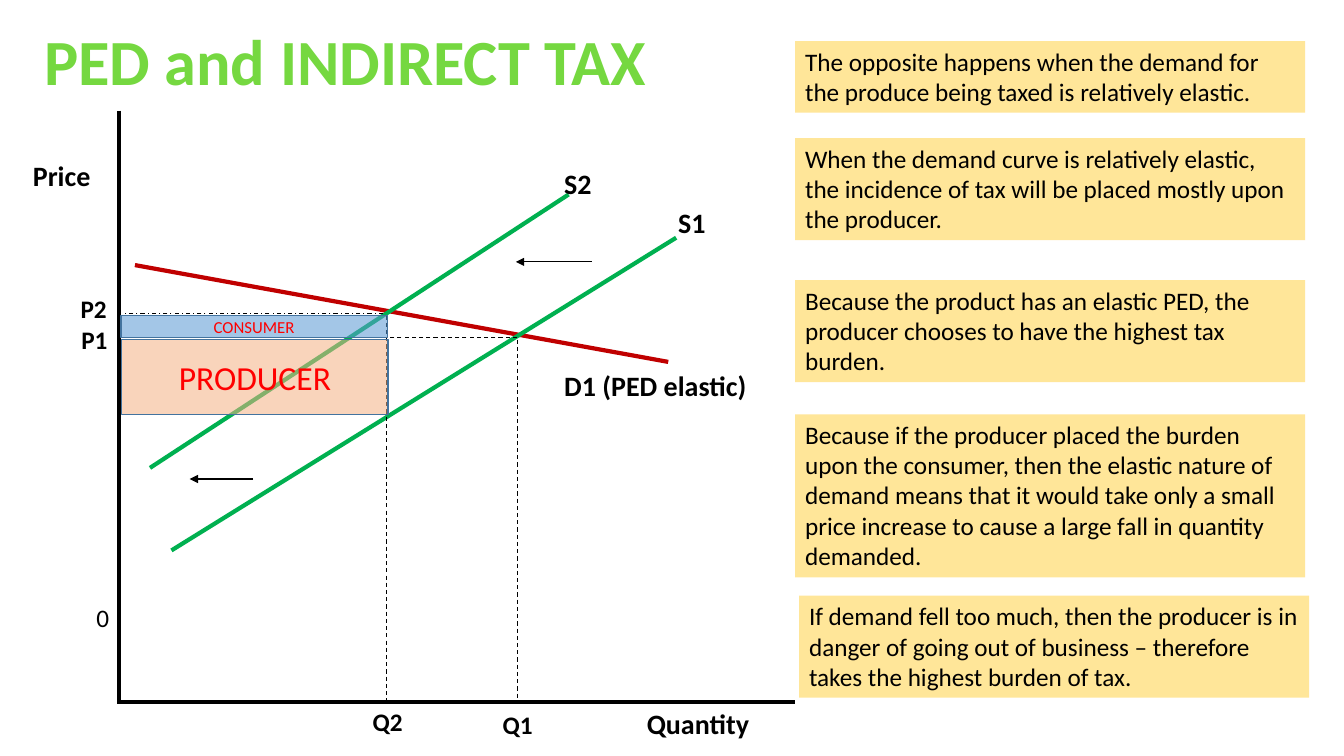
from dataclasses import dataclass

import lxml.etree
import pptx
import pptx.dml.color
import pptx.enum.dml
import pptx.enum.shapes
import pptx.enum.text
import pptx.oxml.ns
import pptx.util
from pptx.util import Cm


@dataclass(frozen=True)
class Theme:
    font: str = "Calibri"
    black: str = "000000"
    title: str = "75D840"
    demand: str = "C00000"
    supply: str = "00B050"
    note: str = "FFE699"
    producer: str = "F4B183"
    consumer: str = "5B9BD5"
    burden_border: str = "43739E"
    burden_text: str = "FF0000"
    title_size: int = 46
    producer_size: int = 24
    label_size: int = 20
    body_size: int = 18
    consumer_size: int = 12
    thick: float = 3
    thin: float = 0.75


THEME = Theme()
DASH = pptx.enum.dml.MSO_LINE.DASH
DASH_DOT = pptx.enum.dml.MSO_LINE.DASH_DOT
AXIS_X, AXIS_Y = 3.0, 17.68
Q1_X, Q2_X = 13.03, 9.75


def rgb(colour):
    return pptx.dml.color.RGBColor.from_string(colour)


def add_child(parent, tag, **attributes):
    return lxml.etree.SubElement(parent, pptx.oxml.ns.qn(tag), **attributes)


def write(shape, text, size, colour=THEME.black, bold=False, fit=True):
    frame = shape.text_frame
    frame.word_wrap = True
    if fit:
        frame.auto_size = pptx.enum.text.MSO_AUTO_SIZE.SHAPE_TO_FIT_TEXT
    paragraph = frame.paragraphs[0]
    paragraph.text = text
    paragraph.font.name = THEME.font
    paragraph.font.size = pptx.util.Pt(size)
    paragraph.font.bold = bold
    paragraph.font.color.rgb = rgb(colour)
    return paragraph


def add_label(slide, text, left, top, width, height, size,
              colour=THEME.black, bold=True):
    label = slide.shapes.add_textbox(Cm(left), Cm(top), Cm(width), Cm(height))
    write(label, text, size, colour, bold)


def add_line(slide, start, end, colour=THEME.black, width=THEME.thin,
             dash=None, arrow=False):
    line = slide.shapes.add_connector(
        pptx.enum.shapes.MSO_CONNECTOR.STRAIGHT,
        Cm(start[0]), Cm(start[1]), Cm(end[0]), Cm(end[1]))
    line.line.color.rgb = rgb(colour)
    line.line.width = pptx.util.Pt(width)
    if dash:
        line.line.dash_style = dash
    if arrow:
        add_child(line.line._get_or_add_ln(), "a:tailEnd", type="triangle")
    add_child(line._element.spPr, "a:effectLst")


def add_box(slide, left, top, width, height, fill):
    box = slide.shapes.add_shape(
        pptx.enum.shapes.MSO_SHAPE.RECTANGLE,
        Cm(left), Cm(top), Cm(width), Cm(height))
    box.shadow.inherit = False
    box.fill.solid()
    box.fill.fore_color.rgb = rgb(fill)
    box.line.fill.background()
    return box


def add_burden(slide, text, left, top, height, fill, opacity, size):
    burden = add_box(slide, left, top, 6.71, height, fill)
    fill_colour = burden._element.spPr.find(".//" + pptx.oxml.ns.qn("a:srgbClr"))
    add_child(fill_colour, "a:alpha", val=str(opacity * 1000))
    burden.line.color.rgb = rgb(THEME.burden_border)
    burden.line.width = pptx.util.Pt(1)
    burden.text_frame.vertical_anchor = pptx.enum.text.MSO_ANCHOR.MIDDLE
    paragraph = write(burden, text, size, THEME.burden_text, fit=False)
    paragraph.alignment = pptx.enum.text.PP_ALIGN.CENTER


def add_note(slide, text, left, top, height):
    note = add_box(slide, left, top, 12.85, height, THEME.note)
    note.text_frame.vertical_anchor = pptx.enum.text.MSO_ANCHOR.TOP
    paragraph = write(note, text, THEME.body_size)
    paragraph.alignment = pptx.enum.text.PP_ALIGN.LEFT


def add_diagram(slide):
    # Axes
    add_line(slide, (AXIS_X, 2.79), (AXIS_X, AXIS_Y), width=THEME.thick)
    add_line(slide, (2.95, AXIS_Y), (20.04, AXIS_Y), width=THEME.thick)

    # Demand and supply curves
    for start, end, colour in (
        ((3.4, 6.68), (16.84, 9.12), THEME.demand),
        ((4.32, 13.87), (17.04, 5.99), THEME.supply),
        ((14.33, 4.9), (3.78, 11.79), THEME.supply),
    ):
        add_line(slide, start, end, colour, THEME.thick)

    # Price and quantity guides
    for start, end, dash in (
        ((Q1_X, 8.51), (3.1, 8.51), DASH),
        ((Q1_X, 8.56), (Q1_X, AXIS_Y), DASH),
        ((Q2_X, 7.95), (Q2_X, AXIS_Y), DASH),
        ((9.65, 7.9), (3.1, 7.9), DASH_DOT),
        ((9.78, 10.44), (AXIS_X, 10.44), DASH_DOT),
    ):
        add_line(slide, start, end, dash=dash)

    # Supply shift arrows
    add_line(slide, (14.91, 6.6), (13.0, 6.6), arrow=True)
    add_line(slide, (6.38, 12.07), (4.78, 12.07), arrow=True)

    # Axis and curve names
    for text, left, top, width in (
        ("Price", 0.58, 3.86, 3.73),
        ("Quantity", 16.05, 17.68, 4.01),
        ("D1 (PED elastic)", 13.97, 9.17, 6.25),
        ("S1", 16.84, 5.05, 3.2),
        ("S2", 13.97, 4.06, 2.13),
    ):
        add_label(slide, text, left, top, width, 1.11, THEME.label_size)

    # Axis values
    for text, left, top, width in (
        ("P1", 1.8, 8.05, 1.32),
        ("P2", 1.78, 7.26, 1.47),
        ("Q1", 12.42, 17.75, 1.27),
        ("Q2", 9.14, 17.68, 1.83),
        ("0", 2.18, 15.06, 2.95),
    ):
        add_label(slide, text, left, top, width, 1.03, THEME.body_size,
                  bold=text != "0")

    # Tax burden areas
    add_burden(slide, "PRODUCER", 3.07, 8.56, 1.88, THEME.producer, 54,
               THEME.producer_size)
    add_burden(slide, "CONSUMER", 3.05, 7.95, 0.56, THEME.consumer, 56,
               THEME.consumer_size)


def main():
    presentation = pptx.Presentation()
    presentation.slide_width = Cm(33.87)
    presentation.slide_height = Cm(19.05)
    slide = presentation.slides.add_slide(presentation.slide_layouts[6])

    add_diagram(slide)

    # Title
    add_label(slide, "PED and INDIRECT TAX", 0.86, 0.41, 29.9, 2.24,
              THEME.title_size, THEME.title)

    # Explanation
    for text, left, top, height in (
        ("The opposite happens when the demand for the produce being taxed "
         "is relatively elastic.", 20.04, 1.04, 1.8),
        ("When the demand curve is relatively elastic, the incidence of tax "
         "will be placed mostly upon the producer.", 20.04, 3.48, 2.57),
        ("Because the product has an elastic PED, the producer chooses to "
         "have the highest tax burden.", 20.04, 7.06, 2.57),
        ("Because if the producer placed the burden upon the consumer, then "
         "the elastic nature of demand means that it would take only a small "
         "price increase to cause a large fall in quantity demanded.",
         20.04, 10.44, 4.11),
        ("If demand fell too much, then the producer is in danger of going "
         "out of business – therefore takes the highest burden of tax.",
         20.14, 15.01, 2.57),
    ):
        add_note(slide, text, left, top, height)

    presentation.save("out.pptx")


if __name__ == "__main__":
    main()
